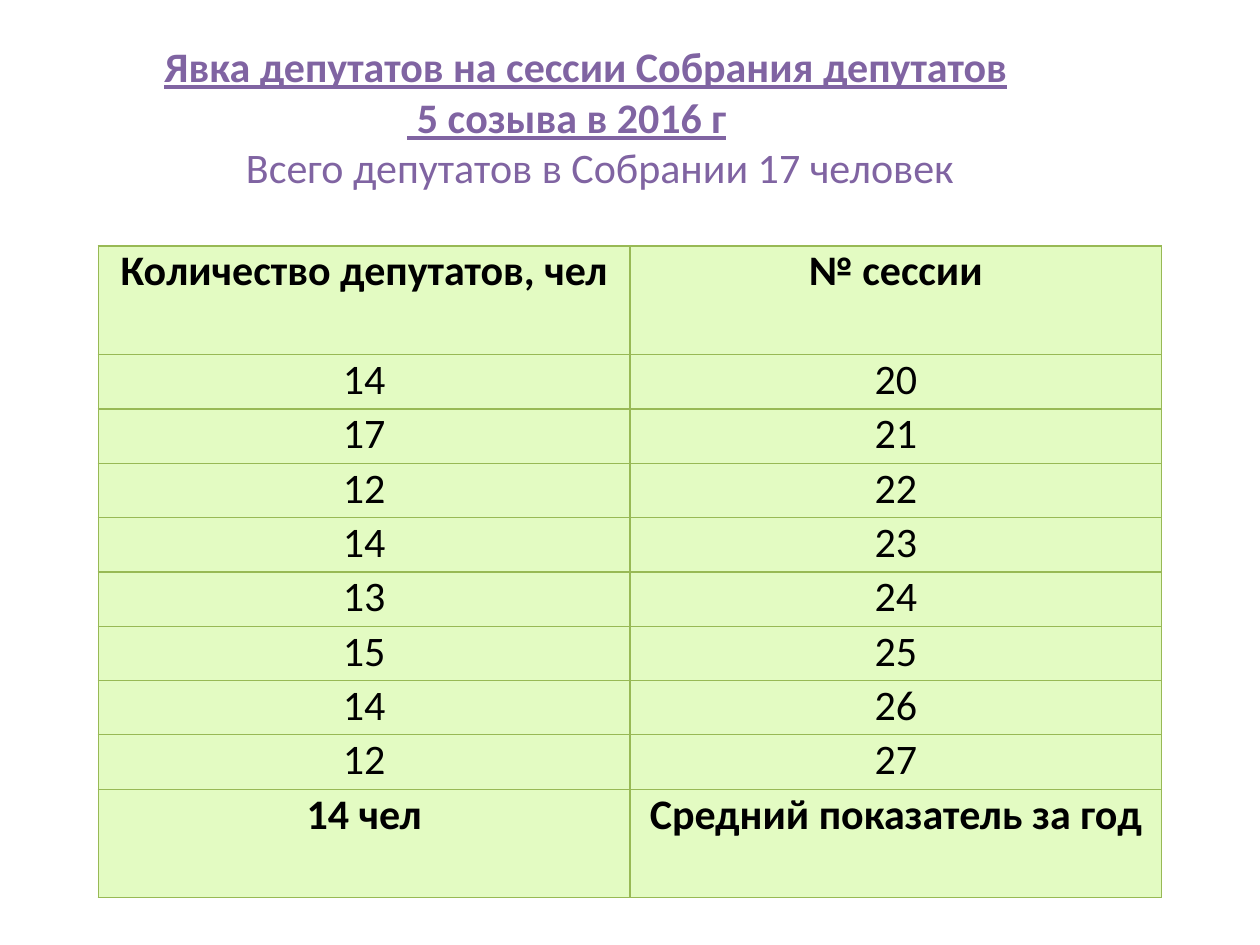
import pptx
import pptx.dml.color
import pptx.enum.text
import pptx.oxml
import pptx.oxml.ns
import pptx.util

Cm = pptx.util.Cm
Pt = pptx.util.Pt
CENTER = pptx.enum.text.PP_ALIGN.CENTER


def color(value):
    return pptx.dml.color.RGBColor.from_string(value)


class SlideBuilder:
    font = "Calibri"
    size = 24
    title_color = "8064A2"
    text_color = "000000"
    cell_fill = "E3FBC2"
    border_color = "98B955"
    border_width = 0.75

    def __init__(self, slide):
        self.slide = slide

    def add_run(self, paragraph, text, text_color, bold=False, underline=False):
        paragraph.alignment = CENTER
        run = paragraph.add_run()
        run.text = text
        run.font.name = self.font
        run.font.size = Pt(self.size)
        run.font.bold = bold
        run.font.underline = underline
        run.font.color.rgb = color(text_color)

    def add_title(self, left, top, width, height, lines):
        title = self.slide.shapes.title
        title.left, title.top = Cm(left), Cm(top)
        title.width, title.height = Cm(width), Cm(height)
        frame = title.text_frame
        frame.word_wrap = True
        frame.auto_size = pptx.enum.text.MSO_AUTO_SIZE.NONE
        frame.vertical_anchor = pptx.enum.text.MSO_ANCHOR.MIDDLE
        for index, (text, indent, emphasis) in enumerate(lines):
            paragraph = frame.add_paragraph() if index else frame.paragraphs[0]
            paragraph._p.get_or_add_pPr().set("marL", str(int(Cm(indent))))
            self.add_run(paragraph, text, self.title_color, emphasis, emphasis)

    def add_borders(self, cell):
        properties = cell._tc.get_or_add_tcPr()
        for position, side in enumerate(("lnL", "lnR", "lnT", "lnB")):
            line = pptx.oxml.parse_xml(
                f'<a:{side} {pptx.oxml.ns.nsdecls("a")} w="{int(Pt(self.border_width))}">'
                f'<a:solidFill><a:srgbClr val="{self.border_color}"/></a:solidFill></a:{side}>'
            )
            properties.insert(position, line)

    def add_cell(self, cell, text, bold):
        cell.margin_left = cell.margin_right = Cm(0.18)
        cell.margin_top = cell.margin_bottom = 0
        cell.fill.solid()
        cell.fill.fore_color.rgb = color(self.cell_fill)
        self.add_borders(cell)
        self.add_run(cell.text_frame.paragraphs[0], text, self.text_color, bold)

    def add_table(self, left, top, width, row_height, rows):
        edges = (0, len(rows) - 1)
        height = row_height * (len(rows) + len(edges))
        frame = self.slide.shapes.add_table(
            len(rows), len(rows[0]), Cm(left), Cm(top), Cm(width), Cm(height)
        )
        for row_index, values in enumerate(rows):
            is_edge = row_index in edges
            frame.table.rows[row_index].height = Cm(row_height * (2 if is_edge else 1))
            for column_index, text in enumerate(values):
                self.add_cell(frame.table.cell(row_index, column_index), text, is_edge)


def main():
    presentation = pptx.Presentation()
    presentation.slide_width = Cm(25.4)
    presentation.slide_height = Cm(19.05)
    slide = presentation.slides.add_slide(presentation.slide_layouts[5])
    builder = SlideBuilder(slide)

    builder.add_title(0, 0.76, 22.86, 3.18, [
        ("Явка депутатов на сессии Собрания депутатов", 0.76, True),
        (" 5 созыва в 2016 г", 0, True),
        ("Всего депутатов в Собрании 17 человек", 1.33, False),
    ])

    attendance = [14, 17, 12, 14, 13, 15, 14, 12]
    sessions = [(str(count), str(number)) for number, count in enumerate(attendance, 20)]
    builder.add_table(1.98, 4.96, 21.44, 1.095, [
        ("Количество депутатов, чел", "№ сессии"),
        *sessions,
        ("14 чел", "Средний показатель за год"),
    ])
    presentation.save("out.pptx")


if __name__ == "__main__":
    main()
